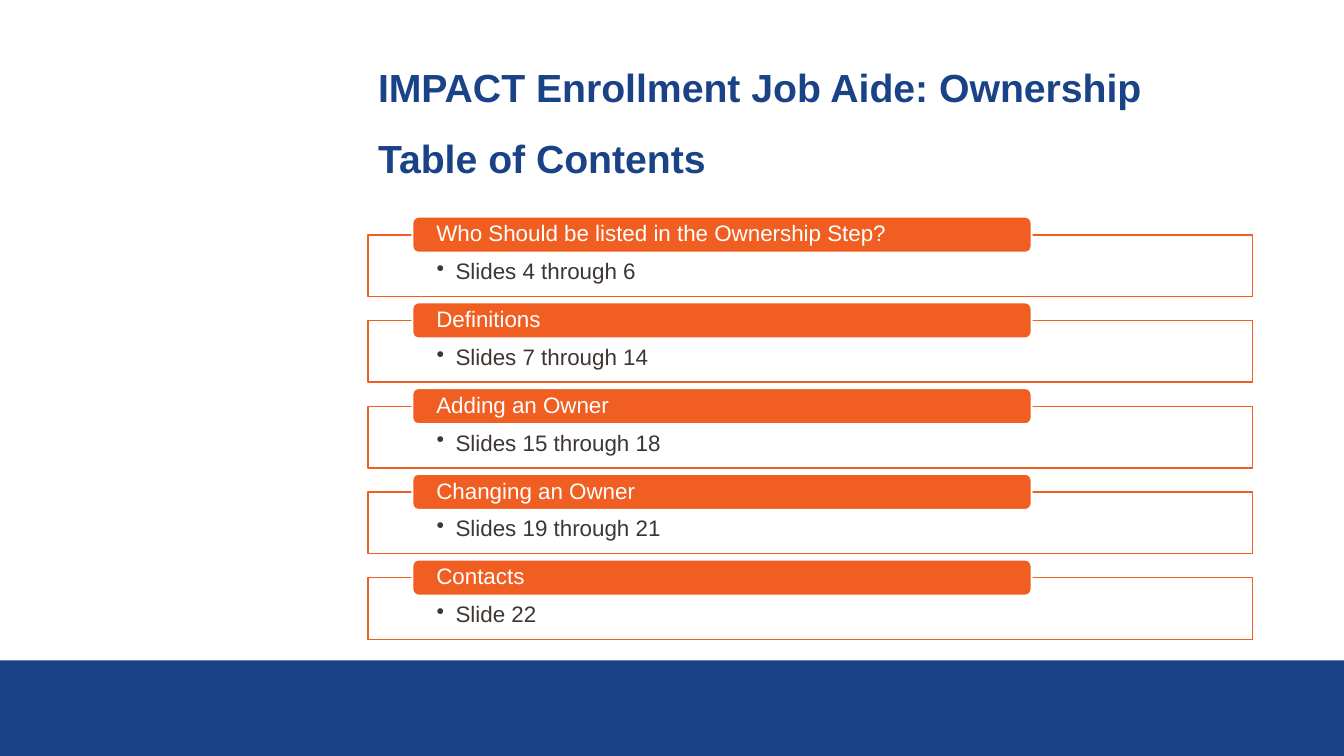
import pptx
import pptx.util
import pptx.dml.color
import pptx.enum.shapes
import pptx.enum.text
import pptx.oxml.ns
import lxml.etree

Cm, Pt = pptx.util.Cm, pptx.util.Pt
MSO_SHAPE = pptx.enum.shapes.MSO_SHAPE
MSO_ANCHOR = pptx.enum.text.MSO_ANCHOR
qn = pptx.oxml.ns.qn
BLUE, ORANGE, WHITE, GRAY = "1A4387", "F05E21", "FFFFFF", "3D3633"


def color(hex_string):
    return pptx.dml.color.RGBColor.from_string(hex_string)


def add_box(kind, left, top, width, height, fill, line=None, line_width=1):
    shape = slide.shapes.add_shape(kind, Cm(left), Cm(top), Cm(width), Cm(height))
    shape.shadow.inherit = False
    shape.fill.solid()
    shape.fill.fore_color.rgb = color(fill)
    if line:
        shape.line.color.rgb = color(line)
        shape.line.width = Pt(line_width)
    else:
        shape.line.fill.background()
    return shape


presentation = pptx.Presentation()
presentation.slide_width, presentation.slide_height = Cm(33.86), Cm(19.05)
slide = presentation.slides.add_slide(presentation.slide_layouts[5])

# Footer band
add_box(MSO_SHAPE.RECTANGLE, 0, 16.64, 33.86, 2.41, BLUE)

# Title
title = slide.shapes.title
title_place = {"left": 9.27, "top": 0.94, "width": 22.4, "height": 3.68}
for name, value in title_place.items():
    setattr(title, name, Cm(value))
title.text_frame.text = "IMPACT Enrollment Job Aide: Ownership\vTable of Contents"
title.text_frame.auto_size = pptx.enum.text.MSO_AUTO_SIZE.NONE
title.text_frame.vertical_anchor = MSO_ANCHOR.MIDDLE
paragraph = title.text_frame.paragraphs[0]
paragraph.alignment = pptx.enum.text.PP_ALIGN.LEFT
paragraph.line_spacing = 1.5
for run in paragraph.runs:
    for name, value in {"name": "Arial", "size": Pt(28), "bold": True}.items():
        setattr(run.font, name, value)
    run.font.color.rgb = color(BLUE)

# Contents: a framed slide range with a heading tab on its top edge
contents = [
    ("Who Should be listed in the Ownership Step?", "Slides 4 through 6"),
    ("Definitions", "Slides 7 through 14"),
    ("Adding an Owner", "Slides 15 through 18"),
    ("Changing an Owner", "Slides 19 through 21"),
    ("Contacts", "Slide 22"),
]
frame_format = {"margin_left": Cm(1.73), "margin_top": Cm(0.64), "margin_right": Cm(1.73),
                "margin_bottom": Cm(0.3), "vertical_anchor": MSO_ANCHOR.TOP, "word_wrap": True}
tab_format = {"margin_left": Cm(0.56), "margin_top": 0, "margin_right": Cm(0.56),
              "margin_bottom": 0, "vertical_anchor": MSO_ANCHOR.MIDDLE, "word_wrap": True}

for index, (heading, pages) in enumerate(contents):
    top = 5.92 + index * 2.16
    frame = add_box(MSO_SHAPE.RECTANGLE, 9.27, top, 22.28, 1.55, WHITE, ORANGE)
    fill_color = frame.fill._xPr.find(qn("a:solidFill"))[0]
    lxml.etree.SubElement(fill_color, qn("a:alpha"), val="90000")
    tab = add_box(MSO_SHAPE.ROUNDED_RECTANGLE, 10.39, top - 0.46, 15.6, 0.91, ORANGE, WHITE, 1.5)

    for shape, text, text_color, text_format in (
        (frame, pages, GRAY, frame_format),
        (tab, heading, WHITE, tab_format),
    ):
        for name, value in text_format.items():
            setattr(shape.text_frame, name, value)
        paragraph = shape.text_frame.paragraphs[0]
        paragraph.text = text
        paragraph.alignment = pptx.enum.text.PP_ALIGN.LEFT
        paragraph.line_spacing = 0.9
        if shape is frame:
            paragraph.level = 1
            properties = paragraph._p.get_or_add_pPr()
            properties.set("marL", str(Cm(0.48)))
            properties.set("indent", str(-Cm(0.48)))
            lxml.etree.SubElement(properties, qn("a:buChar"), char="•")
        for name, value in {"name": "Arial", "size": Pt(16)}.items():
            setattr(paragraph.runs[0].font, name, value)
        paragraph.runs[0].font.color.rgb = color(text_color)

presentation.save("out.pptx")
